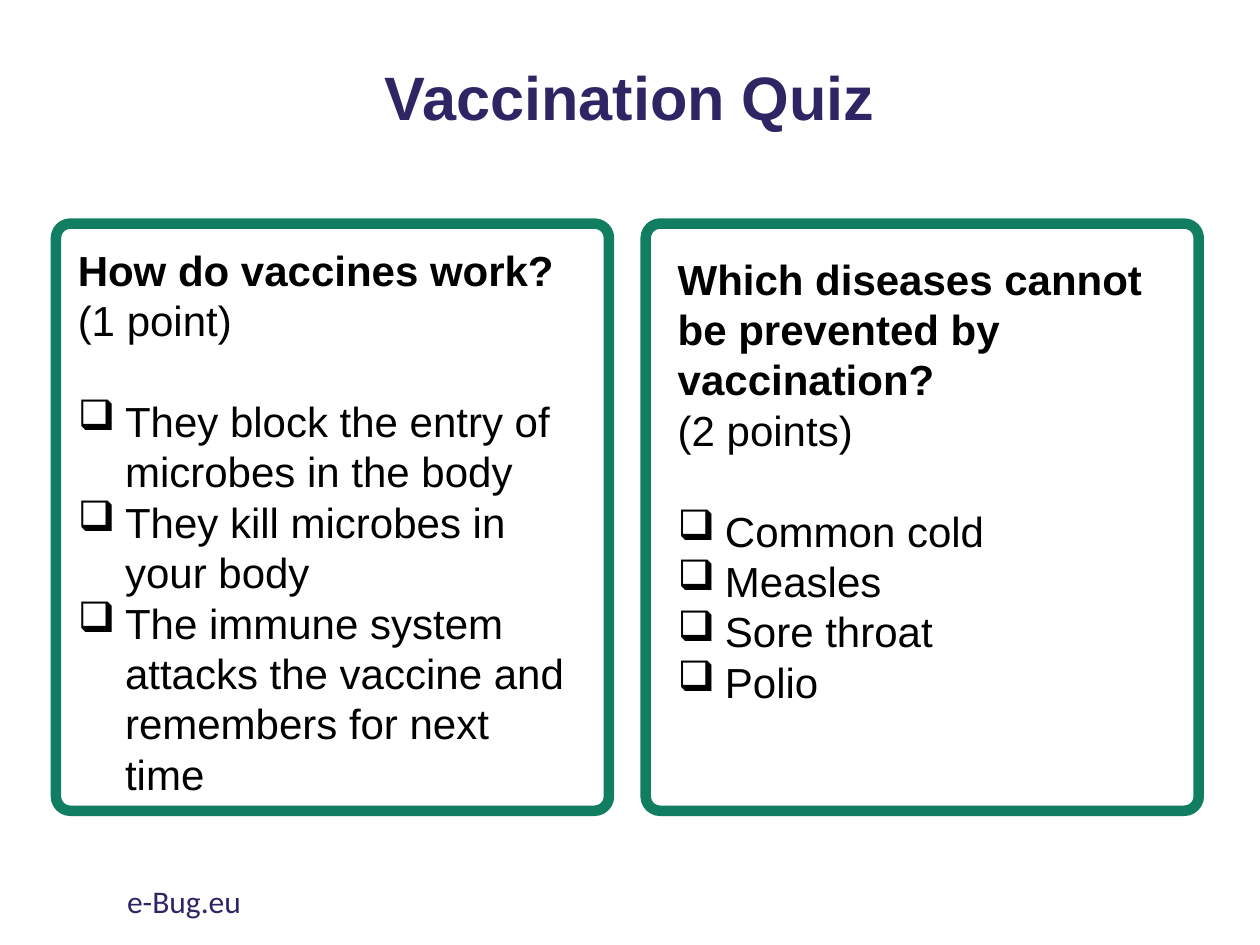
"""Build the vaccination quiz slide with two question cards."""
from dataclasses import dataclass

from lxml import etree
from pptx import Presentation
from pptx.dml.color import RGBColor
from pptx.enum.shapes import MSO_SHAPE
from pptx.enum.text import MSO_ANCHOR, MSO_AUTO_SIZE, PP_ALIGN
from pptx.oxml.ns import qn
from pptx.util import Length, Pt

ROUNDED = MSO_SHAPE.ROUNDED_RECTANGLE
TOP, MIDDLE = MSO_ANCHOR.TOP, MSO_ANCHOR.MIDDLE
LEFT, CENTER = PP_ALIGN.LEFT, PP_ALIGN.CENTER
GROW, FIXED = MSO_AUTO_SIZE.SHAPE_TO_FIT_TEXT, MSO_AUTO_SIZE.NONE


@dataclass(frozen=True)
class Theme:
    heading_font: str = "Arial"
    footer_font: str = "Calibri"
    navy: RGBColor = RGBColor(0x30, 0x25, 0x64)
    green: RGBColor = RGBColor(0x11, 0x7E, 0x62)
    black: RGBColor = RGBColor(0, 0, 0)
    title_size: Length = Pt(35)
    body_size: Length = Pt(24)
    footer_size: Length = Pt(18)
    body_line: Length = Pt(28.8)
    card_border: Length = Pt(6)
    option_indent: Length = Pt(27)
    option_tab: Length = Pt(36)


@dataclass(frozen=True)
class Box:
    left: float
    top: float
    width: float
    height: float

    def lengths(self) -> tuple:
        return Pt(self.left), Pt(self.top), Pt(self.width), Pt(self.height)


@dataclass(frozen=True)
class Question:
    text: str
    points: str
    options: tuple
    box: Box


THEME = Theme()
CARD = Box(32, 127.8, 316, 335.5)
CARD_PITCH = 337
QUESTIONS = (
    Question(
        "How do vaccines work?",
        "(1 point)",
        (
            "They block the entry of microbes in the body",
            "They kill microbes in your body",
            "The immune system attacks the vaccine and remembers for next time",
        ),
        Box(37.4, 136.1, 299.5, 326.9),
    ),
    Question(
        "Which diseases cannot be prevented by vaccination?",
        "(2 points)",
        ("Common cold", "Measles", "Sore throat", "Polio"),
        Box(380.2, 141.1, 293, 269.3),
    ),
)


def add_text_box(slide, box: Box, anchor=TOP, auto_size=FIXED):
    """Add an empty wrapping text box and return its text frame."""
    frame = slide.shapes.add_textbox(*box.lengths()).text_frame
    frame.word_wrap = True
    frame.vertical_anchor = anchor
    frame.auto_size = auto_size
    return frame


def add_checkbox(paragraph) -> None:
    """Give a paragraph a hanging checkbox bullet and a tab stop."""
    properties = paragraph._p.get_or_add_pPr()
    properties.set("marL", str(THEME.option_indent))
    properties.set("indent", str(-THEME.option_indent))
    etree.SubElement(properties, qn("a:buChar")).set("char", "❑")
    tabs = etree.SubElement(properties, qn("a:tabLst"))
    tab = etree.SubElement(tabs, qn("a:tab"))
    tab.set("pos", str(THEME.option_tab))
    tab.set("algn", "l")


def write(frame, text: str, *, size=THEME.body_size, font=THEME.heading_font,
          color=THEME.black, bold=False, align=LEFT, line_spacing=None,
          space_before=Pt(0), checkbox=False) -> None:
    """Write one formatted paragraph, filling the empty first one if present."""
    paragraph = frame.paragraphs[0] if not frame.text else frame.add_paragraph()
    if checkbox:
        add_checkbox(paragraph)
    paragraph.alignment = align
    paragraph.line_spacing = line_spacing
    paragraph.space_before = space_before
    run = paragraph.add_run()
    run.text = text
    run.font.name = font
    run.font.size = size
    run.font.bold = bold
    run.font.color.rgb = color


def add_card(slide, box: Box) -> None:
    """Add one unfilled rounded card outline."""
    card = slide.shapes.add_shape(ROUNDED, *box.lengths())
    card.adjustments[0] = 0.026
    card.shadow.inherit = False
    card.fill.background()
    card.line.color.rgb = THEME.green
    card.line.width = THEME.card_border


def add_question(slide, question: Question) -> None:
    """Add a question, its points and its checkbox options."""
    frame = add_text_box(slide, question.box, auto_size=GROW)
    line = THEME.body_line
    write(frame, question.text, bold=True, line_spacing=line)
    write(frame, question.points, line_spacing=line)
    for index, option in enumerate(question.options):
        gap = Pt(0) if index else line
        write(frame, option, line_spacing=line, space_before=gap, checkbox=True)


def main() -> None:
    """Build and save the presentation."""
    presentation = Presentation()
    presentation.slide_width, presentation.slide_height = Pt(720), Pt(540)
    slide = presentation.slides.add_slide(presentation.slide_layouts[6])

    title = add_text_box(slide, Box(49.7, 20.2, 620.6, 74.2), anchor=MIDDLE)
    write(title, "Vaccination Quiz", size=THEME.title_size, color=THEME.navy,
          bold=True, align=CENTER, line_spacing=0.9)

    for column in range(len(QUESTIONS)):
        left = CARD.left + column * CARD_PITCH
        add_card(slide, Box(left, CARD.top, CARD.width, CARD.height))
    for question in QUESTIONS:
        add_question(slide, question)

    footer = add_text_box(slide, Box(65.5, 500.4, 243.4, 28.8))
    write(footer, "e-Bug.eu", size=THEME.footer_size, font=THEME.footer_font,
          color=THEME.navy)
    presentation.save("out.pptx")


if __name__ == "__main__":
    main()
